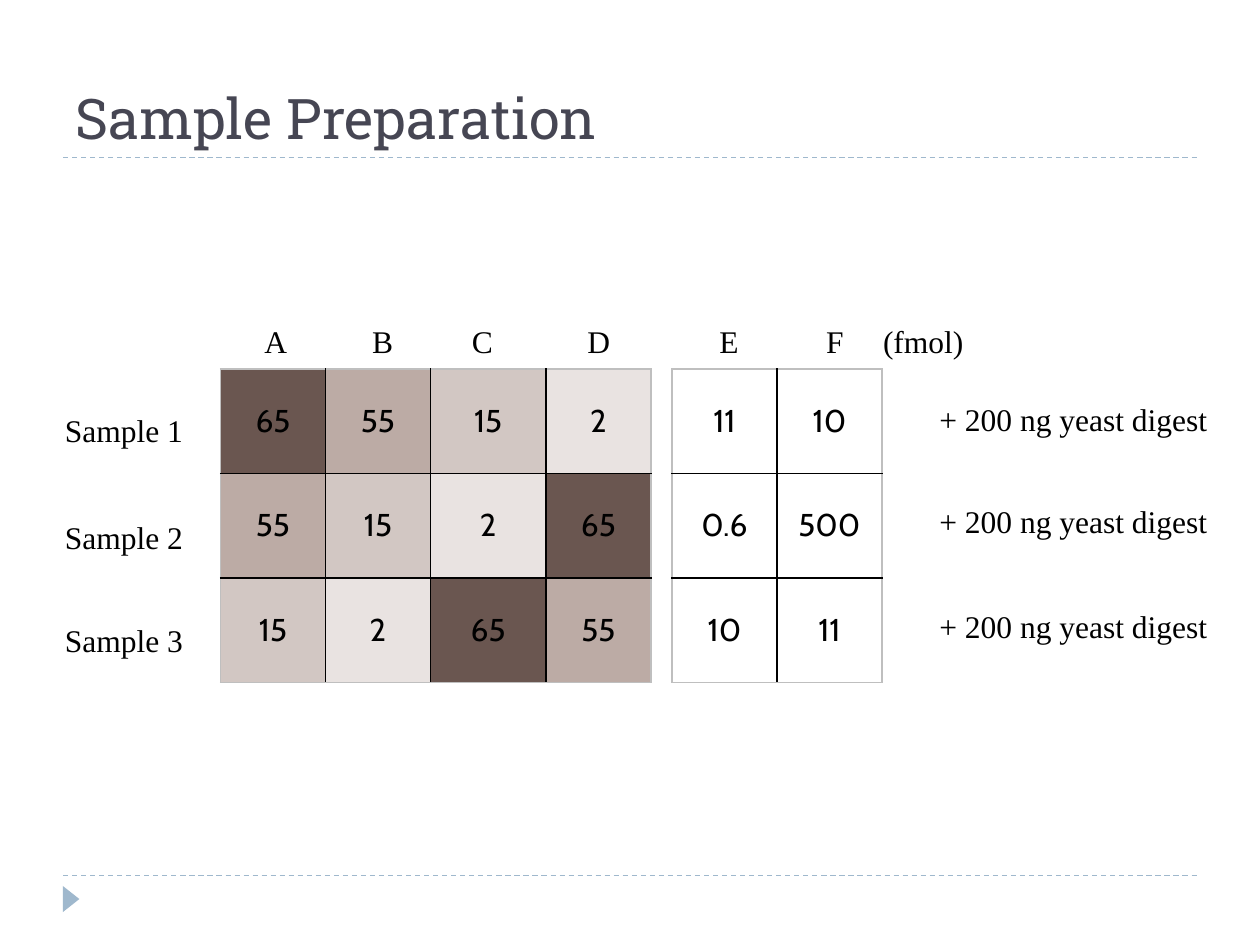
from pptx import Presentation
from pptx.dml.color import RGBColor
from pptx.enum import dml, shapes, text
from pptx.oxml import ns, xmlchemy as xml
from pptx.util import Pt

HUES = {
    "title": "464653", "rule": "9FB8CD", "ink": "000000", "edge": "BFBFBF",
    "65": "6A5650", "55": "BCABA5", "15": "D2C7C3", "2": "E9E3E1",
}
SERIF = "Times New Roman"
ROW = 59.75
MIX = [["65", "55", "15", "2"], ["55", "15", "2", "65"], ["15", "2", "65", "55"]]
SPIKE = [["11", "10"], ["0.6", "500"], ["10", "11"]]
HEADS = ["A", "B", "C", "D", "E", "F", "(fmol)"]
TABS = [61.5, 118.5, 184.5, 260, 321, 353.5]


def color(name):
    return RGBColor.from_string(HUES[name])


def write(frame, words, font=SERIF, size=18, hue="ink", align=text.PP_ALIGN.LEFT):
    par = frame.paragraphs[0]
    par.alignment = align
    run = par.add_run()
    run.text = words
    run.font.name = font
    run.font.size = Pt(size)
    run.font.bold = False
    run.font.color.rgb = color(hue)
    return par


def add_label(slide, words, left, top, width, wrap=False):
    box = slide.shapes.add_textbox(Pt(left), Pt(top), Pt(width), Pt(29))
    box.text_frame.word_wrap = wrap
    return write(box.text_frame, words)


def add_heads(slide):
    par = add_label(slide, "\t".join(HEADS), 144, 180.75, 528, wrap=True)
    stops = xml.OxmlElement("a:tabLst")
    for pos in TABS:
        stop = xml.OxmlElement("a:tab")
        stop.set("pos", str(Pt(pos)))
        stop.set("algn", "l")
        stops.append(stop)
    par._p.get_or_add_pPr().append(stops)


def add_rule(slide, top):
    line = slide.shapes.add_connector(
        shapes.MSO_CONNECTOR.STRAIGHT, Pt(36), Pt(top), Pt(684), Pt(top))
    line.line.color.rgb = color("rule")
    line.line.width = Pt(0.75)
    line.line.dash_style = dml.MSO_LINE.DASH
    line._element.spPr.append(xml.OxmlElement("a:effectLst"))


def add_marker(slide):
    mark = slide.shapes.add_shape(
        shapes.MSO_SHAPE.ISOSCELES_TRIANGLE, Pt(33.1), Pt(509), Pt(15), Pt(9.5))
    mark.rotation = 90
    mark.shadow.inherit = False
    mark.fill.solid()
    mark.fill.fore_color.rgb = color("rule")
    mark.line.fill.background()


def add_border(cell, side, hue):
    line = xml.OxmlElement(f"a:ln{side}")
    line.set("w", str(Pt(1)))
    fill = xml.OxmlElement("a:solidFill")
    tint = xml.OxmlElement("a:srgbClr")
    tint.set("val", HUES[hue])
    fill.append(tint)
    line.append(fill)
    cell._tc.get_or_add_tcPr().append(line)


def add_grid(slide, rows, left, widths, shaded):
    count, span = len(rows), len(widths)
    grid = slide.shapes.add_table(
        count, span, Pt(left), Pt(210.75), Pt(sum(widths)), Pt(ROW * count)).table
    grid.first_row = grid.horz_banding = False
    for col, width in zip(grid.columns, widths):
        col.width = Pt(width)
    for r, row in enumerate(rows):
        grid.rows[r].height = Pt(ROW)
        for c, value in enumerate(row):
            cell = grid.cell(r, c)
            outer = {"L": c == 0, "R": c == span - 1, "T": r == 0, "B": r == count - 1}
            for side, edge in outer.items():
                add_border(cell, side, "edge" if edge else "ink")
            if shaded:
                cell.fill.solid()
                cell.fill.fore_color.rgb = color(value)
            else:
                cell.fill.background()
            cell.vertical_anchor = text.MSO_ANCHOR.MIDDLE
            write(cell.text_frame, value, font="Cabin", align=text.PP_ALIGN.CENTER)


def add_title(slide, words):
    title = slide.shapes.title
    title.left, title.top, title.width, title.height = Pt(36), Pt(12), Pt(648), Pt(78)
    frame = title.text_frame
    frame.auto_size = text.MSO_AUTO_SIZE.NONE
    frame.vertical_anchor = text.MSO_ANCHOR.BOTTOM
    write(frame, words, font="Roboto Slab", size=32, hue="title")


def main():
    deck = Presentation()
    deck.slide_width, deck.slide_height = Pt(720), Pt(540)
    slide = deck.slides.add_slide(deck.slide_layouts[5])
    add_title(slide, "Sample Preparation")
    for top in (500.4, 90):
        add_rule(slide, top)
    add_marker(slide)
    add_heads(slide)
    add_grid(slide, MIX, 126, [60, 60, 66, 60], True)
    add_grid(slide, SPIKE, 384, [60, 60], False)
    for num, top in enumerate((231.25, 292.25, 351.5), 1):
        add_label(slide, f"Sample {num}", 30, top, 82)
    for top in (225.25, 283.5, 343.5):
        add_label(slide, "+ 200 ng yeast digest", 529.75, top, 177)
    deck.save("out.pptx")


if __name__ == "__main__":
    main()
